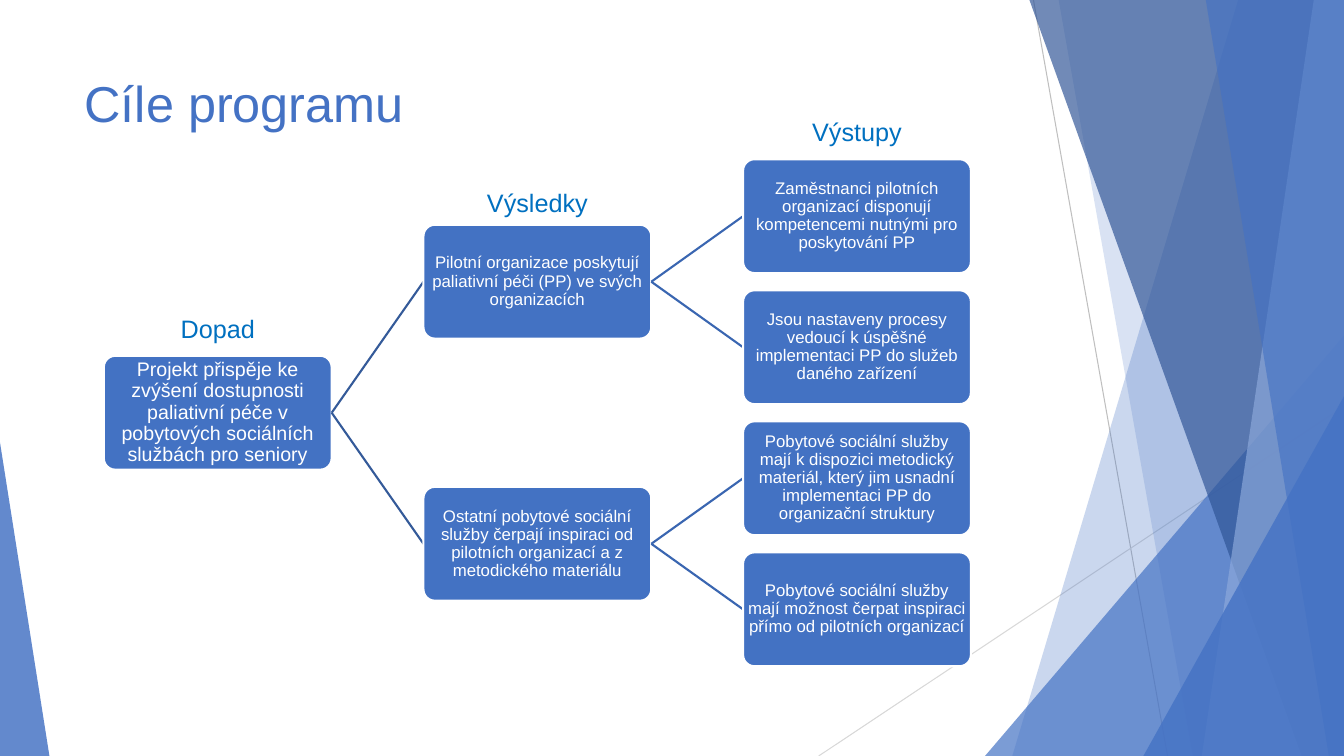
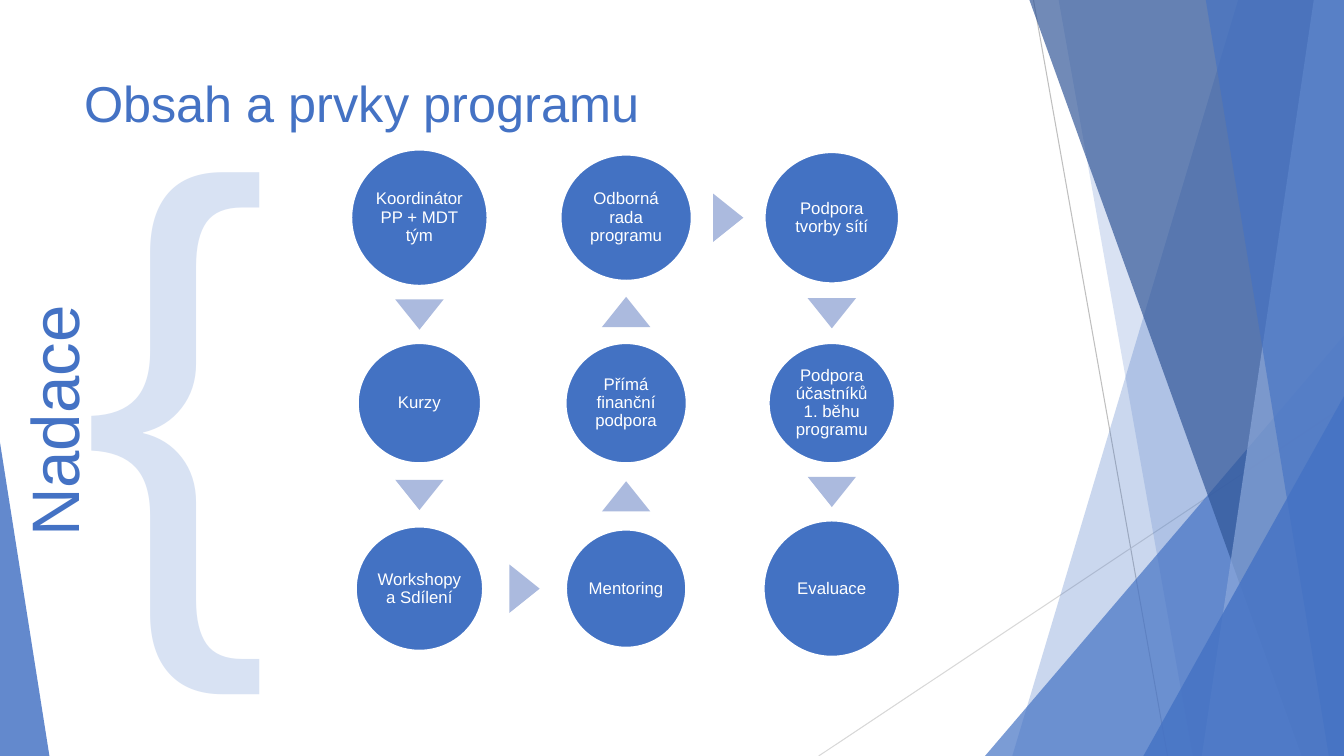
"""Build two slides on the goals and the elements of a palliative care programme."""
from lxml import etree
from pptx import Presentation
from pptx.dml.color import RGBColor
from pptx.enum.shapes import MSO_CONNECTOR, MSO_SHAPE
from pptx.enum.text import MSO_ANCHOR, PP_ALIGN
from pptx.oxml.ns import qn
from pptx.util import Inches, Pt

STRAIGHT = MSO_CONNECTOR.STRAIGHT
ROUND_BOX, CIRCLE, TRIANGLE = (
    MSO_SHAPE.ROUNDED_RECTANGLE, MSO_SHAPE.OVAL, MSO_SHAPE.ISOSCELES_TRIANGLE)
LEFT, CENTER = PP_ALIGN.LEFT, PP_ALIGN.CENTER
MIDDLE = MSO_ANCHOR.MIDDLE
LEFT_SITE, RIGHT_SITE = 1, 3

FONT = "Arial"
WHITE = RGBColor(0xFF, 0xFF, 0xFF)
BLUE = RGBColor(0x44, 0x72, 0xC4)
NAVY = RGBColor(0x2F, 0x54, 0x96)
SOFT_BLUE = RGBColor(0x8D, 0xA9, 0xDB)
NODE_BLUE = RGBColor(0x43, 0x72, 0xC3)
HEADING_BLUE = RGBColor(0x00, 0x70, 0xC0)
ARROW_BLUE = RGBColor(0xAB, 0xBA, 0xDE)
BRACE_BLUE = RGBColor(0xD8, 0xE2, 0xF3)
GRAY = RGBColor(0xBF, 0xBF, 0xBF)
LIGHT_GRAY = RGBColor(0xD8, 0xD8, 0xD8)
BRANCH_COLORS = (RGBColor(0x34, 0x5A, 0x99), RGBColor(0x3A, 0x66, 0xB1))

SLIDE_W, SLIDE_H = 13.33, 7.5

BOX_W, BOX_H = 2.26, 1.13
TREE_LEFT, TREE_TOP = 1.03, 1.58
LEVEL_STEP, LEAF_STEP = 3.17, 1.3
GOALS = (
    "Projekt přispěje ke zvýšení dostupnosti paliativní péče v pobytových "
    "sociálních službách pro seniory", [
        ("Pilotní organizace poskytují paliativní péči (PP) ve svých organizacích", [
            ("Zaměstnanci pilotních organizací disponují kompetencemi nutnými "
             "pro poskytování PP", []),
            ("Jsou nastaveny procesy vedoucí k úspěšné implementaci PP do služeb "
             "daného zařízení", []),
        ]),
        ("Ostatní pobytové sociální služby čerpají inspiraci od pilotních "
         "organizací a z metodického materiálu", [
             ("Pobytové sociální služby mají k dispozici metodický materiál, který "
              "jim usnadní implementaci PP do organizační struktury", []),
             ("Pobytové sociální služby mají možnost čerpat inspiraci přímo od "
              "pilotních organizací", []),
         ]),
    ])
LEVEL_HEADINGS = (("Dopad", 3.06), ("Výsledky", 1.81), ("Výstupy", 1.1))

COLUMNS = (4.16, 6.21, 8.25)
ROWS = (2.16, 4.0, 5.84)
STEPS = (
    ("Koordinátor PP + MDT tým", 0, 0, 1.36, 1.36),
    ("Kurzy", 0, 1, 1.23, 1.2),
    ("Workshopy a Sdílení", 0, 2, 1.27, 1.24),
    ("Mentoring", 1, 2, 1.2, 1.18),
    ("Přímá finanční podpora", 1, 1, 1.21, 1.2),
    ("Odborná rada programu", 1, 0, 1.31, 1.26),
    ("Podpora tvorby sítí", 2, 0, 1.34, 1.31),
    ("Podpora účastníků 1. běhu programu", 2, 1, 1.26, 1.2),
    ("Evaluace", 2, 2, 1.36, 1.36),
)
ARROW_W, ARROW_H = 0.48, 0.3


def write(frame, text, size, color, align=LEFT):
    """Put one formatted paragraph into a text frame."""
    frame.word_wrap = True
    frame.text = text
    paragraph = frame.paragraphs[0]
    paragraph.alignment = align
    paragraph.font.name = FONT
    paragraph.font.size = Pt(size)
    paragraph.font.color.rgb = color
    return paragraph


def add_label(slide, text, left, top, width, height, size, color, align=LEFT):
    """Add a text box with one line of text."""
    label = slide.shapes.add_textbox(
        Inches(left), Inches(top), Inches(width), Inches(height))
    write(label.text_frame, text, size, color, align)
    return label


def paint(shape, color, opacity=100):
    """Fill a shape without outline or shadow."""
    shape.shadow.inherit = False
    shape.line.fill.background()
    shape.fill.solid()
    shape.fill.fore_color.rgb = color
    if opacity < 100:
        tint = shape._element.spPr.find(qn("a:solidFill")).find(qn("a:srgbClr"))
        etree.SubElement(tint, qn("a:alpha"), val=str(opacity * 1000))


def add_preset(slide, preset, left, top, width, height, color, opacity=100):
    """Add a filled preset shape."""
    shape = slide.shapes.add_shape(
        preset, Inches(left), Inches(top), Inches(width), Inches(height))
    paint(shape, color, opacity)
    return shape


def add_node(slide, preset, left, top, width, height, text, size, border, inset):
    """Add a blue diagram node with white centred text."""
    node = add_preset(slide, preset, left, top, width, height, NODE_BLUE)
    node.line.color.rgb = WHITE
    node.line.width = Pt(border)
    frame = node.text_frame
    frame.margin_left = frame.margin_right = Inches(inset)
    frame.margin_top = frame.margin_bottom = Inches(inset)
    frame.vertical_anchor = MIDDLE
    write(frame, text, size, WHITE, CENTER).line_spacing = 0.9
    return node


def add_line(slide, start, end, color, width):
    """Add a straight connector without shadow."""
    line = slide.shapes.add_connector(
        STRAIGHT, *(Inches(value) for value in (*start, *end)))
    line.line.color.rgb = color
    line.line.width = Pt(width)
    etree.SubElement(line._element.spPr, qn("a:effectLst"))
    return line


def add_band(slide, top_left, top_right, bottom_left, color, opacity):
    """Add a full-height slanted band that ends at the right slide edge."""
    points = [(top_right, 0), (SLIDE_W, SLIDE_H), (bottom_left, SLIDE_H)]
    if top_right < SLIDE_W:
        points.insert(1, (SLIDE_W, 0))
    outline = slide.shapes.build_freeform(Inches(top_left), 0, scale=1.0)
    outline.add_line_segments([(Inches(x), Inches(y)) for x, y in points])
    paint(outline.convert_to_shape(), color, opacity)


def add_corner(slide, left, top, width, apex, opacity):
    """Add a triangle that stands on the bottom edge."""
    corner = add_preset(
        slide, TRIANGLE, left, top, width, SLIDE_H - top, BLUE, opacity)
    corner.adjustments[0] = apex


def add_base_slide(deck, title):
    """Add a slide with the shared facets and title."""
    slide = deck.slides.add_slide(deck.slide_layouts[6])
    add_line(slide, (10.25, 0), (11.58, SLIDE_H), GRAY, 0.75)
    add_line(slide, (SLIDE_W, 4.03), (8.12, SLIDE_H), LIGHT_GRAY, 0.75)
    add_band(slide, 12.28, SLIDE_W, 10.04, BLUE, 28)
    add_band(slide, 10.5, SLIDE_W, 11.83, BLUE, 20)
    add_corner(slide, 9.77, 3.33, 3.56, 1, 70)
    add_band(slide, 10.21, SLIDE_W, 12.91, NAVY, 68)
    add_band(slide, 13.03, SLIDE_W, 11.92, SOFT_BLUE, 68)
    add_band(slide, 11.96, SLIDE_W, 13.18, BLUE, 63)
    add_corner(slide, 11.34, 3.93, 1.99, 1, 80)
    add_corner(slide, 0, 4.39, 0.49, 0, 83)
    add_label(slide, title, 0.74, 0.67, 9.4, 1.44, 36, BLUE)
    return slide


def count_leaves(goal):
    """Count the end nodes below a goal."""
    return sum(map(count_leaves, goal[1])) or 1


def add_goal(slide, goal, level=0, first_leaf=0):
    """Add a goal centred on its leaves, then its branches."""
    text, children = goal
    left = TREE_LEFT + level * LEVEL_STEP
    top = TREE_TOP + (first_leaf + (count_leaves(goal) - 1) / 2) * LEAF_STEP
    box = add_node(slide, ROUND_BOX, left, top, BOX_W, BOX_H, text,
                   12 if level else 14, 1.5, 0.01)
    box.adjustments[0] = 0.1
    start = (left + BOX_W, top + BOX_H / 2)
    for child in children:
        branch = add_line(slide, start, start, BRANCH_COLORS[level], 1.5)
        child_box = add_goal(slide, child, level + 1, first_leaf)
        branch.begin_connect(box, RIGHT_SITE)
        branch.end_connect(child_box, LEFT_SITE)
        first_leaf += count_leaves(child)
    return box


def add_step_arrow(slide, step, following):
    """Add a triangle in the middle of the gap between two steps."""
    _, column, row, width, height = step
    _, next_column, next_row, next_width, next_height = following
    x = (COLUMNS[column] + COLUMNS[next_column]) / 2
    y = (ROWS[row] + ROWS[next_row]) / 2
    if column != next_column:
        x += (width - next_width) / 4
        rotation = 90
    else:
        direction = next_row - row
        y += direction * (height - next_height) / 4
        rotation = 180 if direction > 0 else 0
    arrow = add_preset(slide, TRIANGLE, x - ARROW_W / 2, y - ARROW_H / 2,
                       ARROW_W, ARROW_H, ARROW_BLUE)
    arrow.rotation = rotation


def add_goals_slide(deck):
    """Add the tree of impact, results and outputs."""
    slide = add_base_slide(deck, "Cíle programu")
    add_goal(slide, GOALS)
    for level, (heading, top) in enumerate(LEVEL_HEADINGS):
        left = TREE_LEFT + 0.17 + level * LEVEL_STEP
        add_label(slide, heading, left, top, 1.92, 0.4, 18, HEADING_BLUE, CENTER)


def add_elements_slide(deck):
    """Add the snake of programme elements beside a brace."""
    slide = add_base_slide(deck, "Obsah a prvky programu")
    add_label(slide, "{", 0.72, 0.13, 1.22, 6.83, 400, BRACE_BLUE)
    add_label(slide, "Nadace", -0.78, 3.66, 2.62, 0.91, 48, BLUE).rotation = 270
    for text, column, row, width, height in STEPS:
        add_node(slide, CIRCLE, COLUMNS[column] - width / 2,
                 ROWS[row] - height / 2, width, height, text, 12, 2, 0.02)
    for step, following in zip(STEPS, STEPS[1:]):
        add_step_arrow(slide, step, following)


def main():
    """Build and save the deck."""
    deck = Presentation()
    deck.slide_width = Inches(SLIDE_W)
    deck.slide_height = Inches(SLIDE_H)
    add_goals_slide(deck)
    add_elements_slide(deck)
    deck.save("out.pptx")


if __name__ == "__main__":
    main()
